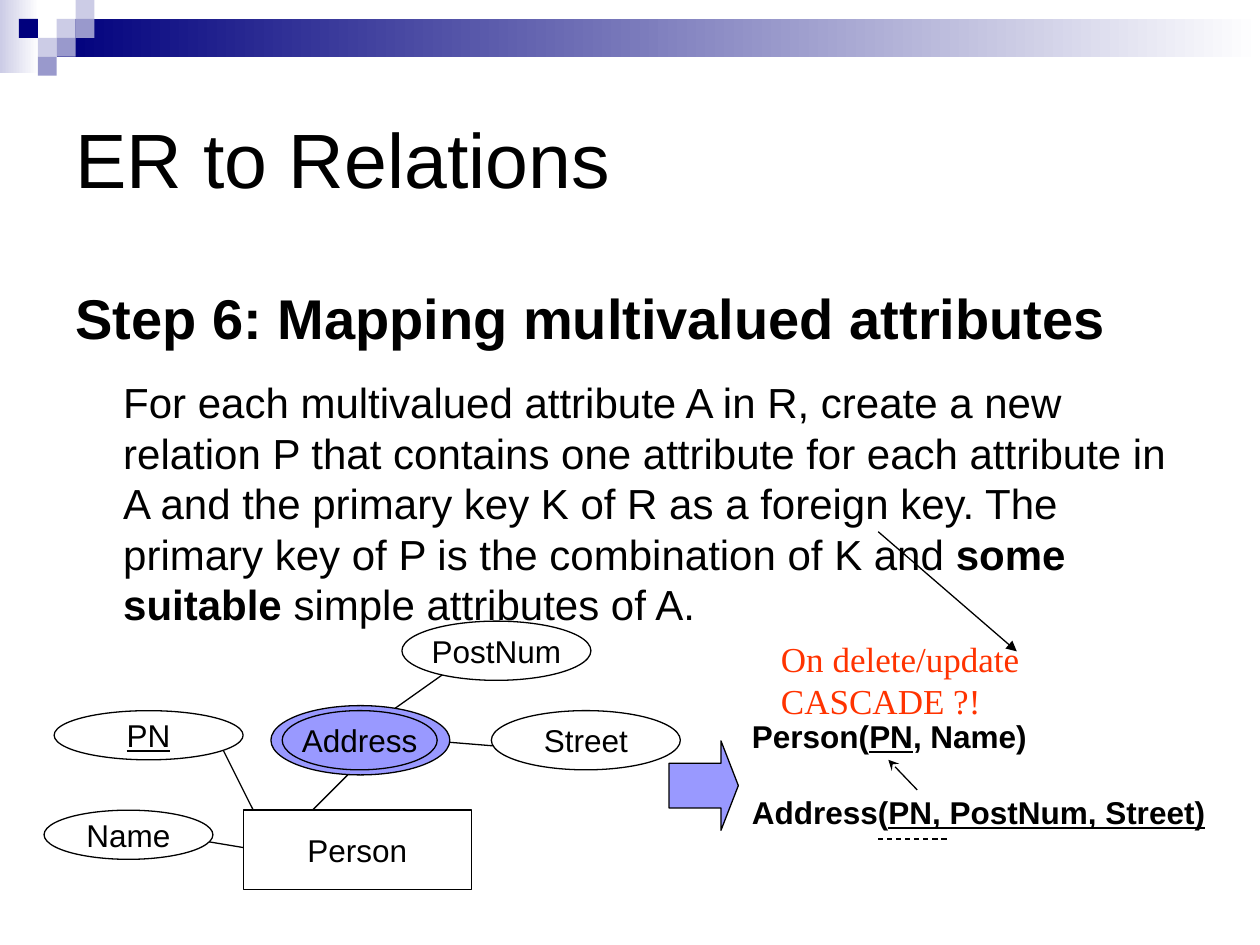
from lxml import etree
from pptx import Presentation
from pptx.dml.color import RGBColor
from pptx.enum.dml import MSO_LINE
from pptx.enum.shapes import MSO_CONNECTOR, MSO_SHAPE
from pptx.enum.text import MSO_ANCHOR, PP_ALIGN
from pptx.oxml.ns import qn
from pptx.util import Inches, Pt

RECT, ELLIPSE, ARROW = MSO_SHAPE.RECTANGLE, MSO_SHAPE.OVAL, MSO_SHAPE.RIGHT_ARROW
STRAIGHT, DASH = MSO_CONNECTOR.STRAIGHT, MSO_LINE.DASH
TOP, MIDDLE, CENTER = MSO_ANCHOR.TOP, MSO_ANCHOR.MIDDLE, PP_ALIGN.CENTER

BLACK = RGBColor(0x00, 0x00, 0x00)
WHITE = RGBColor(0xFF, 0xFF, 0xFF)
NAVY = RGBColor(0x00, 0x00, 0x7D)
PALE = RGBColor(0xCC, 0xCC, 0xE6)
MUTED = RGBColor(0x99, 0x99, 0xCC)
VIOLET = RGBColor(0x99, 0x99, 0xFF)
RED = RGBColor(0xFF, 0x33, 0x00)

COLUMNS, ROWS = 100, 75
TILE = 1.5
HAIRLINE = Pt(0.75)

TILES = [(3, 1, PALE), (4, 0, PALE), (4, 1, MUTED), (2, 2, PALE),
         (1, 1, NAVY), (3, 2, MUTED), (2, 3, MUTED)]
LINKS = [(17.7, 59.5, 20.1, 64.3), (15.3, 66.6, 20.1, 67.4),
         (28.8, 60.3, 24, 65.1), (36.6, 52.5, 31.1, 56.4),
         (42.9, 59.5, 34.3, 58.8)]
NODES = [(ELLIPSE, (21.5, 56, 14.2, 5.5), VIOLET, "", False),
         (RECT, (19.3, 64.3, 18.1, 6.3), WHITE, "Person", False),
         (ELLIPSE, (3.5, 64.3, 13.4, 3.9), WHITE, "Name", False),
         (ELLIPSE, (4.3, 56.4, 15, 3.9), WHITE, "PN", True),
         (ELLIPSE, (22.4, 56.4, 12.3, 4.7), VIOLET, "Address", False),
         (ELLIPSE, (39, 56.4, 15, 4.7), WHITE, "Street", False),
         (ELLIPSE, (31.9, 49.3, 15, 4.7), WHITE, "PostNum", False)]


def grid(*cells):
    """Turn columns and rows of the slide grid into lengths."""
    return [Inches(cell * 10 / COLUMNS) for cell in cells]


def set_font(font, size, color=BLACK, name="Arial", bold=False):
    """Set the look shared by all runs of a paragraph."""
    font.size, font.name, font.bold = Pt(size), name, bold
    font.color.rgb = color


def add_block(slide, kind, area, color, fade=False):
    """Add a borderless rectangle or arrow, optionally fading to white."""
    block = slide.shapes.add_shape(kind, *grid(*area))
    block.shadow.inherit = False
    block.line.fill.background()
    if fade:
        block.fill.gradient()
        block.fill.gradient_angle = 0
        for stop, shade in zip(block.fill.gradient_stops, (color, WHITE)):
            stop.color.rgb = shade
    else:
        block.fill.solid()
        block.fill.fore_color.rgb = color
    return block


def add_node(slide, kind, area, color, label, key):
    """Add an outlined diagram node, underlining a key attribute."""
    node = add_block(slide, kind, area, color)
    node.line.color.rgb, node.line.width = BLACK, HAIRLINE
    if label:
        frame = node.text_frame
        frame.word_wrap, frame.vertical_anchor = False, MIDDLE
        paragraph = frame.paragraphs[0]
        paragraph.text, paragraph.alignment = label, CENTER
        set_font(paragraph.font, 18)
        if key:
            paragraph.font.underline = True
    return node


def add_link(slide, ends, arrowhead=None, dash=None):
    """Add a thin straight line with an optional arrowhead at its end."""
    link = slide.shapes.add_connector(STRAIGHT, *grid(*ends))
    link.line.color.rgb, link.line.width = BLACK, HAIRLINE
    if dash:
        link.line.dash_style = dash
    if arrowhead:
        etree.SubElement(link.line._get_or_add_ln(), qn("a:tailEnd"), type=arrowhead)
    etree.SubElement(link._element.spPr, qn("a:effectLst"))


def add_text(slide, area, anchor=TOP, wrap=True):
    """Add an empty text box and return its frame."""
    frame = slide.shapes.add_textbox(*grid(*area)).text_frame
    frame.word_wrap, frame.vertical_anchor = wrap, anchor
    return frame


def add_runs(paragraph, *texts):
    """Add plain runs to a paragraph and return them."""
    runs = []
    for text in texts:
        run = paragraph.add_run()
        run.text = text
        runs.append(run)
    return runs


def add_banner(slide):
    """Add the fading bands and the mosaic of tiles."""
    add_block(slide, RECT, (0, 0, 3.1, 5.8), PALE, fade=True)
    add_block(slide, RECT, (3 * TILE, TILE, COLUMNS - 3 * TILE, 2 * TILE), NAVY, fade=True)
    for column, row, color in TILES:
        add_block(slide, RECT, (column * TILE, row * TILE, TILE, TILE), color)


def add_step(slide):
    """Add the title, the step heading and its rule."""
    title = add_text(slide, (5, 5, 90, 15), MIDDLE).paragraphs[0]
    title.text = "ER to Relations"
    set_font(title.font, 44)

    body = add_text(slide, (5, 22, 90, 42.5))
    heading = body.paragraphs[0]
    heading.text = "Step 6: Mapping multivalued attributes"
    set_font(heading.font, 32, bold=True)

    rule = body.add_paragraph()
    rule.space_before = Pt(15)
    rule._p.get_or_add_pPr().set("marL", str(Inches(0.38)))
    set_font(rule.font, 24)
    _, emphasis, _ = add_runs(
        rule,
        "For each multivalued attribute A in R, create a new relation P that "
        "contains one attribute for each attribute in A and the primary key K "
        "of R as a foreign key. The primary key of P is the combination of K and ",
        "some suitable",
        " simple attributes of A.")
    emphasis.font.bold = True


def add_diagram(slide):
    """Add the entity with its attributes and the mapping arrow."""
    for ends in LINKS:
        add_link(slide, ends)
    for node in NODES:
        add_node(slide, *node)
    mapping = add_node(slide, ARROW, (53.1, 58.8, 5.5, 7.1), VIOLET, "", False)
    mapping.adjustments[0], mapping.adjustments[1] = 0.5, 0.25


def add_relations(slide):
    """Add the resulting relations, the foreign key and the cascade remark."""
    frame = add_text(slide, (58.7, 56.4, 38, 10), wrap=False)
    person, address = frame.paragraphs[0], frame.add_paragraph()
    address.space_before = Pt(22)
    for relation in (person, address):
        set_font(relation.font, 18, bold=True)
    _, person_key, _ = add_runs(person, "Person(", "PN", ", Name)")
    _, address_key = add_runs(address, "Address(", "PN, PostNum, Street)")
    for key in (person_key, address_key):
        key.font.underline = True

    add_link(slide, (69.7, 66.6, 75.2, 66.6), dash=DASH)
    add_link(slide, (72.8, 62.7, 70.5, 60.3), "stealth")
    remark = add_text(slide, (61, 50.1, 30, 7.5)).paragraphs[0]
    remark.text = "On delete/update CASCADE ?!"
    set_font(remark.font, 20, RED, "Times New Roman")
    add_link(slide, (69.7, 42.2, 80.7, 51.7), "triangle")


def main():
    """Build the slide and save it."""
    deck = Presentation()
    deck.slide_width, deck.slide_height = grid(COLUMNS, ROWS)
    slide = deck.slides.add_slide(deck.slide_layouts[6])
    add_banner(slide)
    add_step(slide)
    add_diagram(slide)
    add_relations(slide)
    deck.save("out.pptx")


if __name__ == "__main__":
    main()
